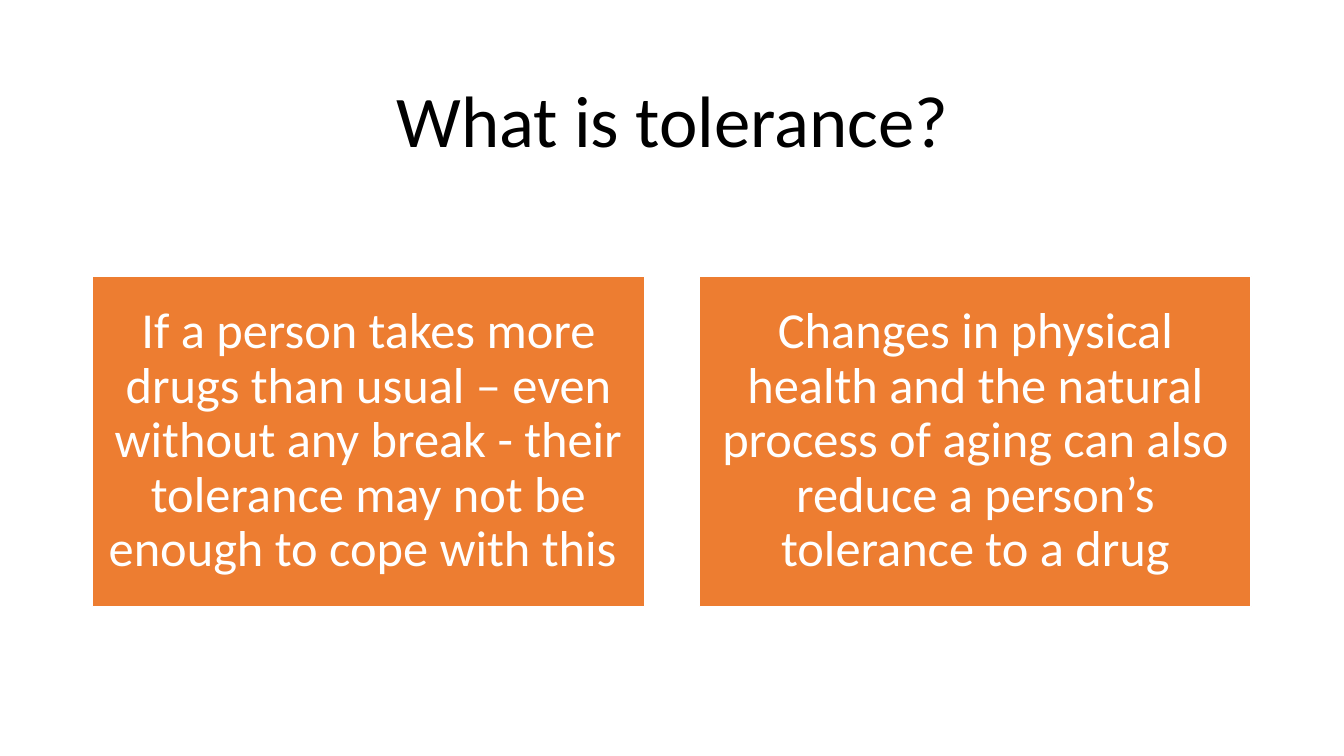
from pptx import Presentation
from pptx.dml.color import RGBColor
from pptx.enum.shapes import MSO_SHAPE
from pptx.enum.text import MSO_ANCHOR, PP_ALIGN
from pptx.util import Emu, Pt

PX = 9144
FONT = "Calibri"
BLACK = RGBColor(0x00, 0x00, 0x00)
WHITE = RGBColor(0xFF, 0xFF, 0xFF)
ORANGE = RGBColor(0xED, 0x7D, 0x31)

TITLE = "What is tolerance?"
REASONS = [
    "If a person takes more drugs than usual – even without any break - "
    "their tolerance may not be enough to cope with this ",
    "Changes in physical health and the natural process of aging can also "
    "reduce a person’s tolerance to a drug",
]


def px(length):
    """Turn px into EMU."""
    return Emu(length * PX)


def write_centred(frame, wording, size, color, inset):
    """Write one centred paragraph into a text frame."""
    frame.word_wrap = True
    frame.vertical_anchor = MSO_ANCHOR.MIDDLE
    frame.margin_left = frame.margin_right = px(inset)
    frame.margin_top = frame.margin_bottom = px(inset)
    paragraph = frame.paragraphs[0]
    paragraph.alignment = PP_ALIGN.CENTER
    paragraph.line_spacing = 0.9
    run = paragraph.add_run()
    run.text = wording
    run.font.name = FONT
    run.font.size = Pt(size)
    run.font.color.rgb = color


def add_title(slide, left, top, width, height):
    """Place the slide title in the given box."""
    title = slide.shapes.add_textbox(px(left), px(top), px(width), px(height))
    write_centred(title.text_frame, TITLE, 52, BLACK, 5)


def add_reasons(slide, left, top, width, height, gap):
    """Place the reason cards side by side in the given box."""
    card_width = (width - gap * (len(REASONS) - 1)) // len(REASONS)
    for column, reason in enumerate(REASONS):
        card_left = left + column * (card_width + gap)
        card = slide.shapes.add_shape(
            MSO_SHAPE.RECTANGLE, px(card_left), px(top), px(card_width), px(height)
        )
        card.shadow.inherit = False
        card.fill.solid()
        card.fill.fore_color.rgb = ORANGE
        card.line.color.rgb = WHITE
        card.line.width = Pt(1)
        write_centred(card.text_frame, reason, 36, WHITE, 15)


def main():
    """Build and save the slide."""
    deck = Presentation()
    deck.slide_width = px(1333)
    deck.slide_height = px(750)
    slide = deck.slides.add_slide(deck.slide_layouts[6])
    add_title(slide, 92, 61, 1150, 124)
    add_reasons(slide, 92, 274, 1149, 328, 55)
    deck.save("out.pptx")


if __name__ == "__main__":
    main()
